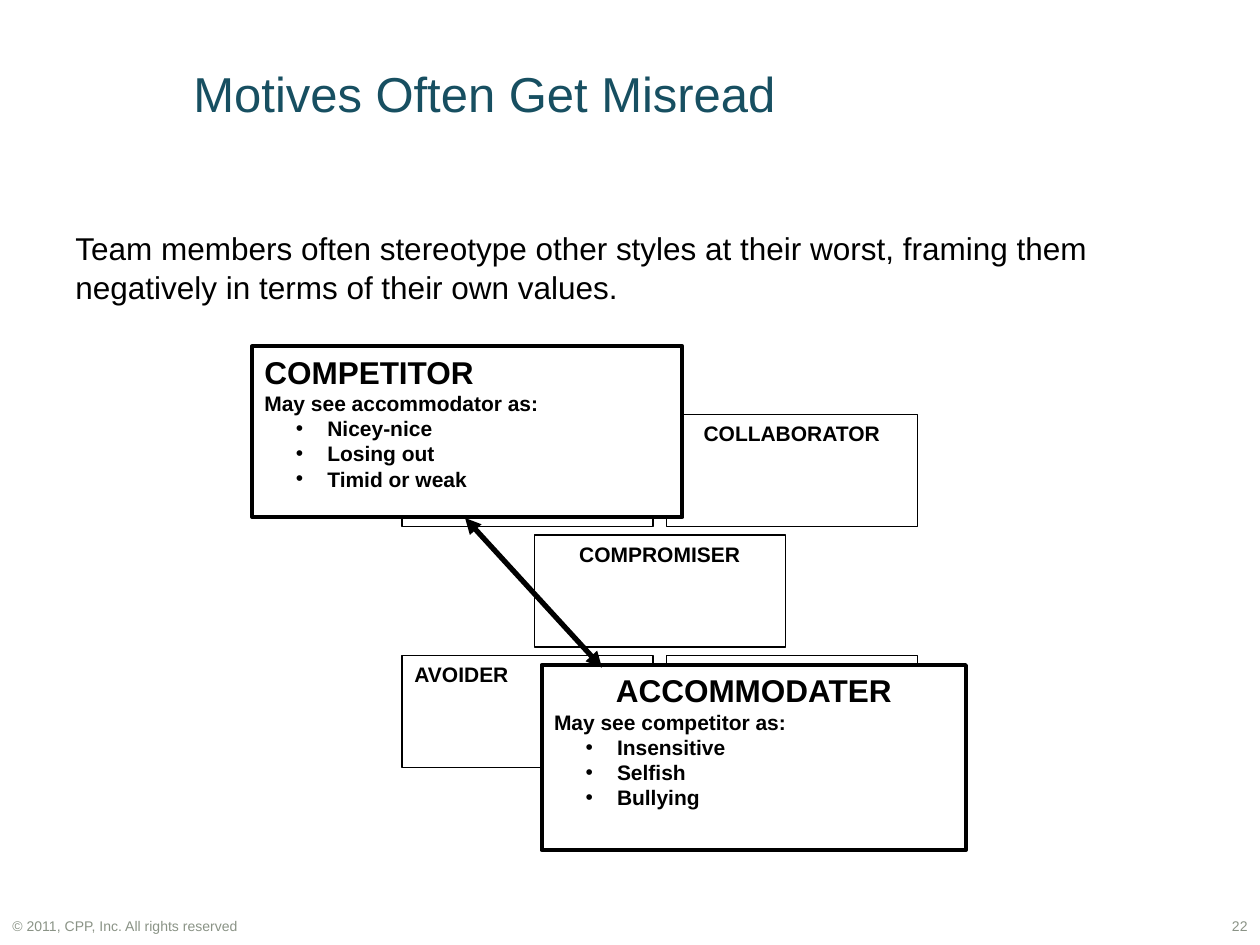
from dataclasses import dataclass

from lxml.etree import SubElement
from pptx import Presentation
from pptx.dml.color import RGBColor
from pptx.enum.shapes import MSO_CONNECTOR, MSO_SHAPE
from pptx.enum.text import MSO_ANCHOR, PP_ALIGN
from pptx.oxml.ns import qn
from pptx.util import Pt


@dataclass(frozen=True)
class Theme:
    font: str = "Arial"
    title: RGBColor = RGBColor(0x17, 0x4F, 0x61)
    ink: RGBColor = RGBColor(0, 0, 0)
    muted: RGBColor = RGBColor(0x8A, 0x93, 0x86)
    paper: RGBColor = RGBColor(255, 255, 255)
    title_size: int = 28
    body_size: int = 18
    label_size: int = 12
    footer_size: int = 8


theme = Theme()


def style(p, text, size, color=theme.ink, bold=False, align=PP_ALIGN.LEFT):
    p.text = text
    p.alignment = align
    for r in p.runs:
        r.font.name = theme.font
        r.font.size = Pt(size)
        r.font.bold = bold
        r.font.color.rgb = color


def add_box(shapes, left, top, width, height, line_width):
    sp = shapes.add_shape(MSO_SHAPE.RECTANGLE, Pt(left), Pt(top), Pt(width), Pt(height))
    sp.shadow.inherit = False
    sp.fill.background()
    sp.line.color.rgb = theme.ink
    sp.line.width = Pt(line_width)
    sp.text_frame.word_wrap = True
    sp.text_frame.vertical_anchor = MSO_ANCHOR.TOP
    return sp


prs = Presentation()
prs.slide_width, prs.slide_height = Pt(720), Pt(540)
s = prs.slides.add_slide(prs.slide_layouts[6])

# Title, statement and footer
texts = [
    ("© 2011, CPP, Inc. All rights reserved", (0, 520.5, 228, 19.5),
     theme.footer_size, theme.muted, PP_ALIGN.LEFT, MSO_ANCHOR.TOP),
    ("Motives Often Get Misread", (103.5, 16, 597.5, 74),
     theme.title_size, theme.title, PP_ALIGN.LEFT, MSO_ANCHOR.MIDDLE),
    ("Team members often stereotype other styles at their worst, framing them "
     "negatively in terms of their own values.", (36, 126, 637, 356.5),
     theme.body_size, theme.ink, PP_ALIGN.LEFT, MSO_ANCHOR.TOP),
    ("22", (648, 520.5, 72, 19.5),
     theme.footer_size, theme.muted, PP_ALIGN.RIGHT, MSO_ANCHOR.TOP),
]
for text, bounds, size, color, align, anchor in texts:
    tf = s.shapes.add_textbox(*map(Pt, bounds)).text_frame
    tf.word_wrap = True
    tf.vertical_anchor = anchor
    style(tf.paragraphs[0], text, size, color, align=align)
    if size == theme.body_size:
        tf.paragraphs[0].line_spacing = 1.05

# Five conflict styles: columns and rows are counted in half steps
diagram = s.shapes.add_group_shape().shapes
grid_left, grid_top, column_step, row_step = 229.75, 237, 75.5, 68.75
conflict_styles = [
    (0, 0, "", PP_ALIGN.LEFT),
    (2, 0, "COLLABORATOR", PP_ALIGN.CENTER),
    (2, 2, "", PP_ALIGN.LEFT),
    (0, 2, "AVOIDER", PP_ALIGN.LEFT),
    (1, 1, "COMPROMISER", PP_ALIGN.CENTER),
]
for column, row, name, align in conflict_styles:
    sp = add_box(diagram, grid_left + column * column_step,
                 grid_top + row * row_step, 143.5, 64, 0.75)
    if name:
        style(sp.text_frame.paragraphs[0], name, theme.label_size, bold=True, align=align)

# The two opposed styles and how each misreads the other
callouts = [
    ((144, 198, 246, 97.5), "COMPETITOR", PP_ALIGN.LEFT,
     "May see accommodator as:", ["Nicey-nice", "Losing out", "Timid or weak"]),
    ((309.5, 380, 242.5, 105.75), "ACCOMMODATER", PP_ALIGN.CENTER,
     "May see competitor as:", ["Insensitive", "Selfish", "Bullying"]),
]
for bounds, name, align, lead, views in callouts:
    sp = add_box(diagram, *bounds, 2.25)
    sp.fill.solid()
    sp.fill.fore_color.rgb = theme.paper
    tf = sp.text_frame
    style(tf.paragraphs[0], name, theme.body_size, bold=True, align=align)
    style(tf.add_paragraph(), lead, theme.label_size, bold=True)
    for view in views:
        p = tf.add_paragraph()
        p.level = 1
        pPr = p._p.get_or_add_pPr()
        pPr.set("marL", str(Pt(36)))
        pPr.set("indent", str(-Pt(18)))
        SubElement(pPr, qn("a:buFont"), typeface=theme.font)
        SubElement(pPr, qn("a:buChar"), char="•")
        style(p, view, theme.label_size, bold=True)

# Double-headed arrow between the opposed styles
arrow = diagram.add_connector(MSO_CONNECTOR.STRAIGHT, Pt(265.75), Pt(296), Pt(344), Pt(381.5))
arrow.line.color.rgb = theme.ink
arrow.line.width = Pt(3)
for end in ("a:headEnd", "a:tailEnd"):
    SubElement(arrow.line._get_or_add_ln(), qn(end), type="triangle")
SubElement(arrow._element.spPr, qn("a:effectLst"))

prs.save("out.pptx")
